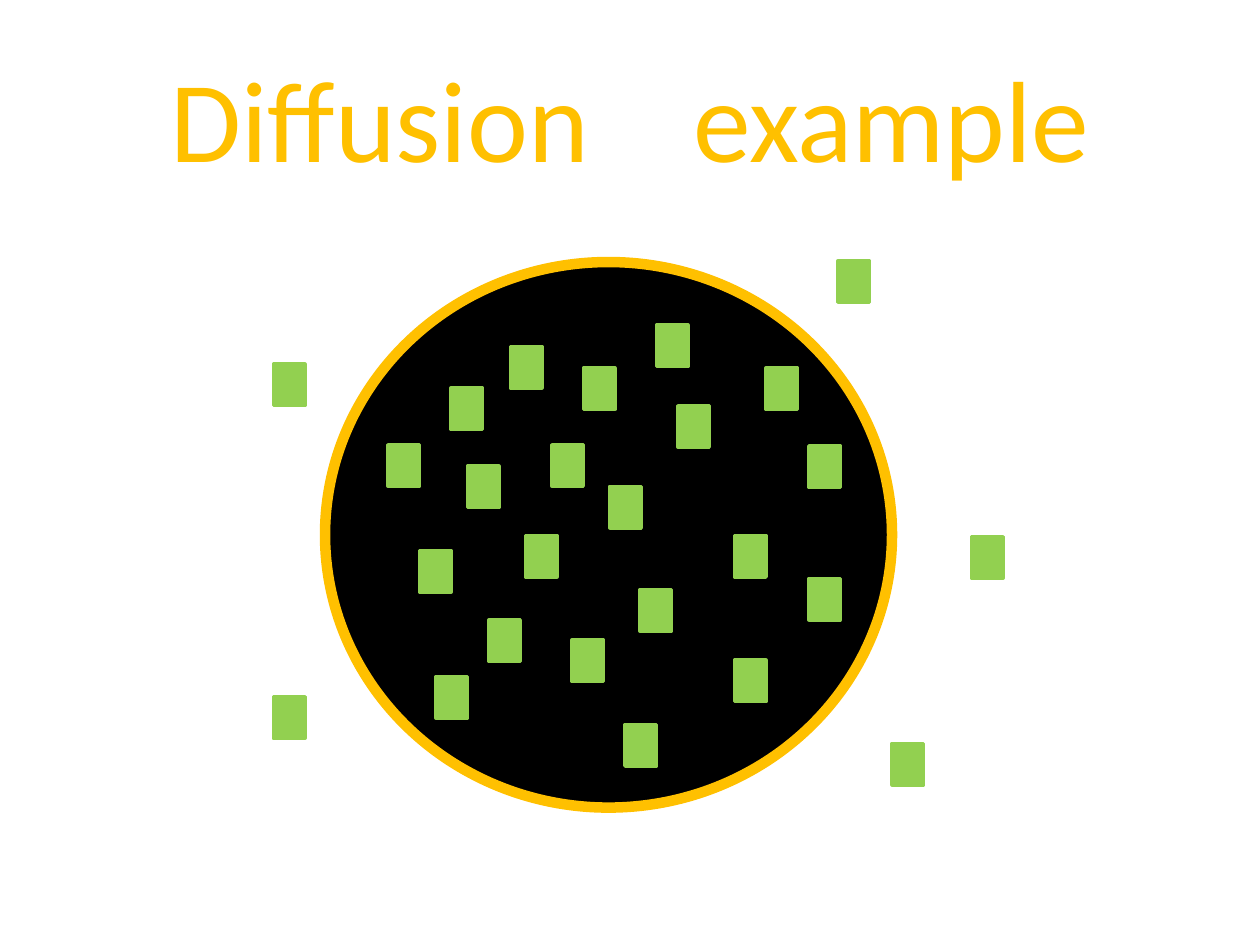
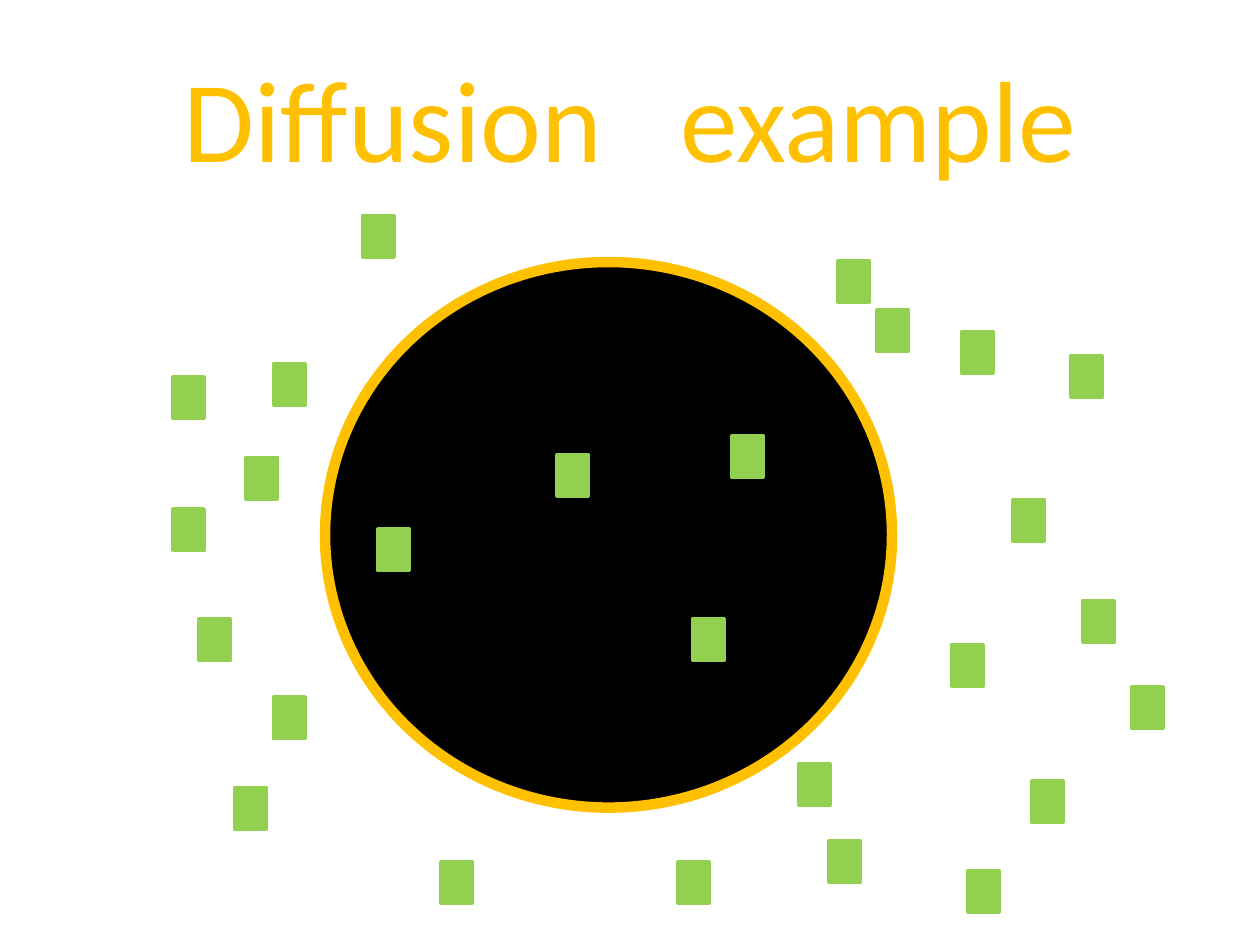
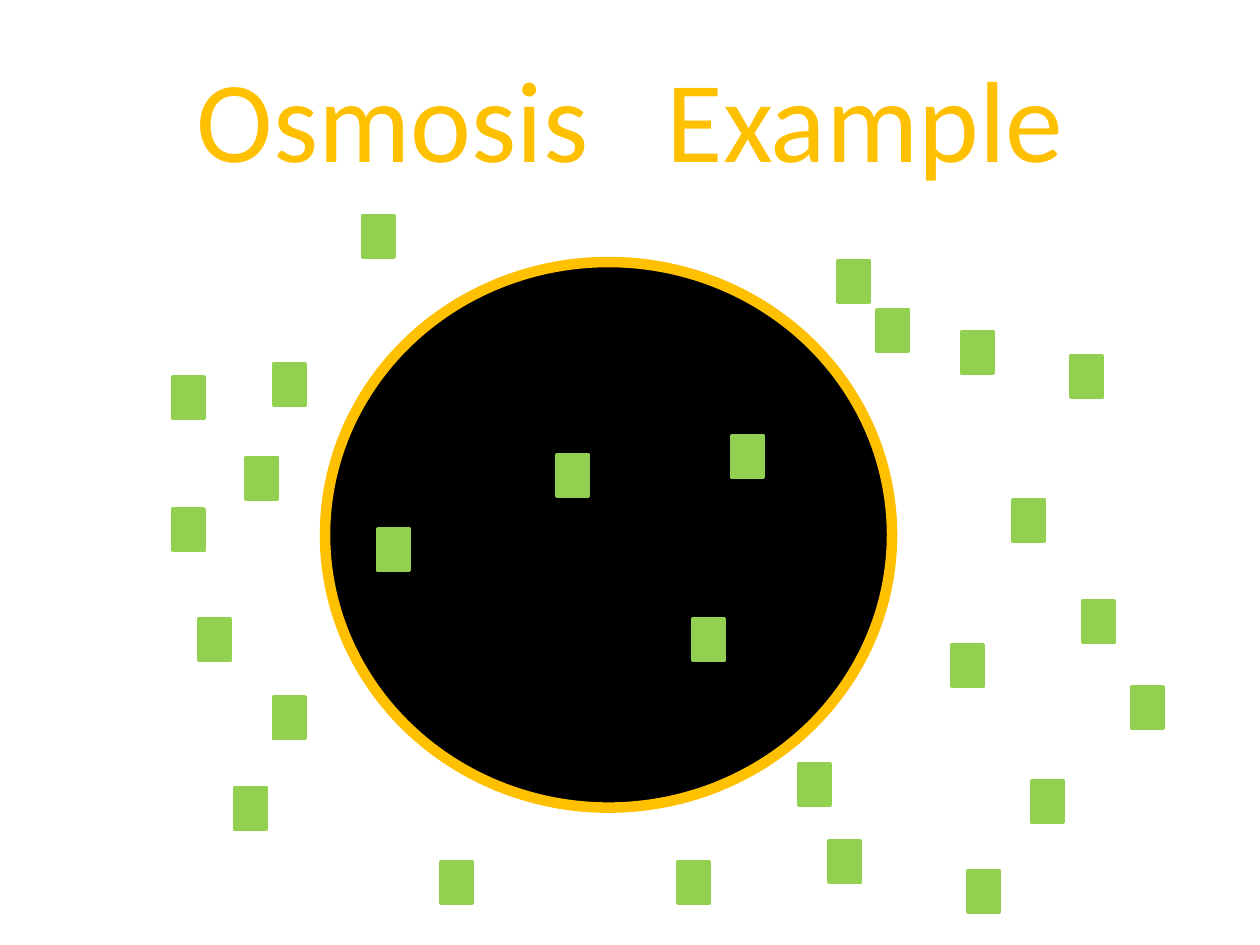
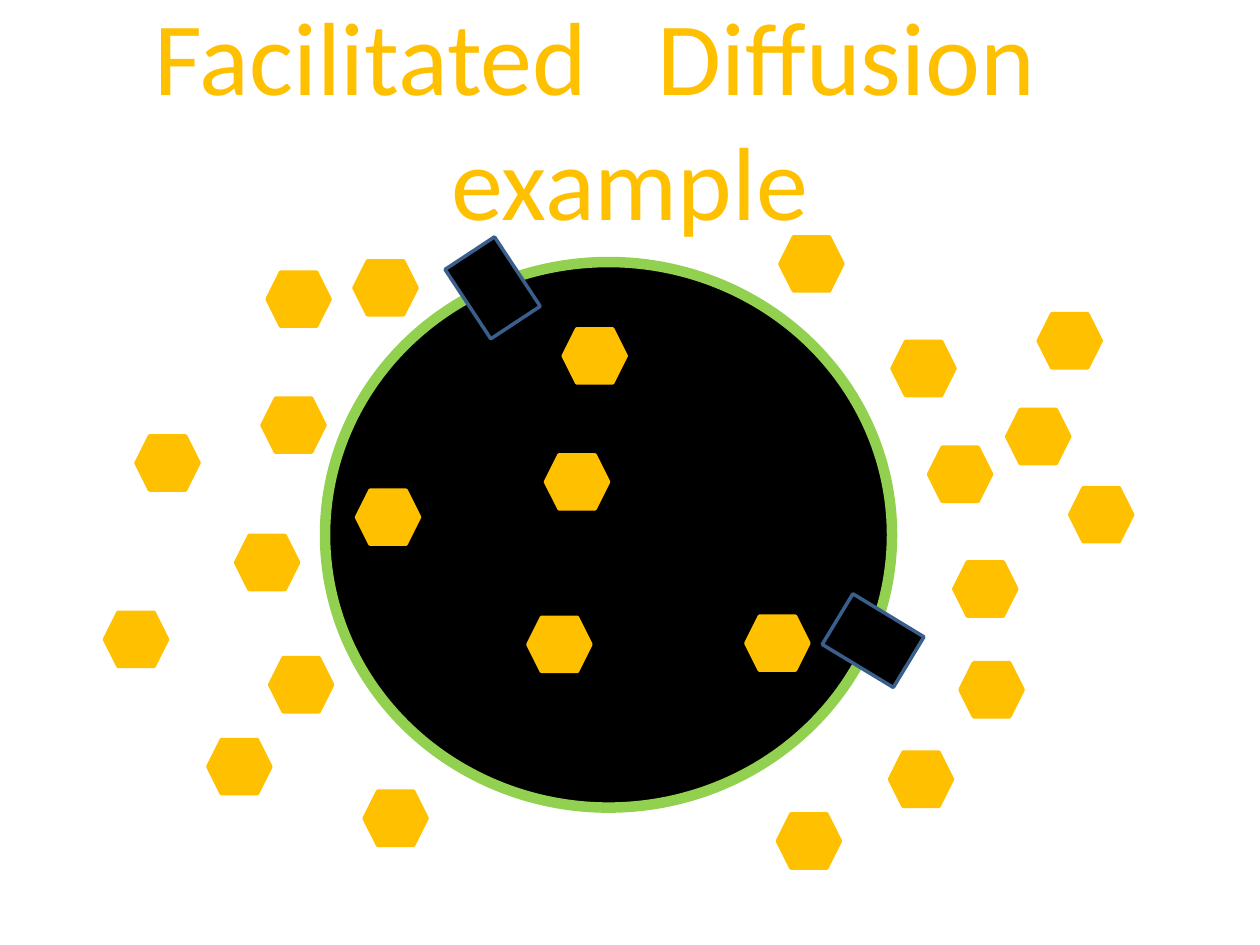
from pptx import Presentation
from pptx.dml.color import RGBColor
from pptx.enum.shapes import MSO_SHAPE
from pptx.enum.text import MSO_ANCHOR, MSO_AUTO_SIZE, PP_ALIGN
from pptx.util import Cm, Pt

INCH = 2.54
GOLD, GREEN, BLACK, BLUE = "FFC000", "92D050", "000000", "3A5F8C"
SPACE = 22.6


def paint(color, value):
    color.rgb = RGBColor.from_string(value)


def draw(slide, kind, box, fill, edge, width=2):
    shape = slide.shapes.add_shape(kind, *[Cm(side * INCH) for side in box])
    shape.shadow.inherit = False
    shape.fill.solid()
    paint(shape.fill.fore_color, fill)
    paint(shape.line.color, edge)
    shape.line.width = Pt(width)
    return shape


packed = [
    (3.58, 3.08), (4.38, 3.53), (3.08, 3.53), (4.05, 2.75), (4.17, 4.25),
    (4.84, 3.86), (3.33, 4.37), (4.63, 2.92), (4.54, 5.08), (5.83, 4.25),
    (5.38, 3.22), (5.08, 4.68), (5.21, 2.58), (3.46, 5.37), (6.42, 3.54),
    (4.96, 5.75), (5.83, 5.24), (3.88, 4.92), (3.71, 3.7), (6.08, 2.92),
    (6.42, 4.59), (6.65, 2.07), (7.71, 4.26), (7.08, 5.9), (2.17, 5.53),
    (2.17, 2.89),
]
spread = [
    (6.58, 6.67), (8.19, 6.2), (5.38, 6.84), (6.34, 6.06), (3.5, 6.84),
    (1.58, 4.91), (7.68, 6.91), (8.98, 5.45), (7.63, 2.63), (5.81, 3.46),
    (1.86, 6.25), (4.42, 3.61), (1.95, 3.63), (3, 4.2), (1.37, 2.99),
    (8.5, 2.82), (5.5, 4.91), (6.96, 2.46), (8.59, 4.77), (2.88, 1.71),
    (1.37, 4.04), (6.65, 2.07), (8.04, 3.97), (7.55, 5.12), (2.17, 5.53),
    (2.17, 2.89),
]
sugar = [
    (2.08, 3.16), (8.49, 3.87), (7.62, 5.26), (6.17, 6.46), (7.37, 3.55),
    (5.92, 4.89), (1.65, 5.87), (7.57, 4.46), (2.14, 5.22), (4.19, 4.9),
    (2.83, 3.89), (7.99, 3.25), (8.24, 2.49), (4.47, 2.61), (4.33, 3.61),
    (2.89, 6.28), (1.08, 3.46), (2.12, 2.16), (7.06, 5.97), (0.83, 4.86),
    (7.08, 2.71), (1.87, 4.25), (2.81, 2.07), (6.19, 1.88),
]
gates = [(3.58, 2.05, 56.6), (6.6, 4.85, 31.2)]

square = (MSO_SHAPE.RECTANGLE, (0.25, 0.33), GREEN)
hexa = (MSO_SHAPE.HEXAGON, (0.5, 0.43), GOLD)

scenes = [
    ([("Diffusion", 3), ("example", 0)], 66, GOLD, square, packed, []),
    ([("Diffusion", 2), ("example", 0)], 66, GOLD, square, spread, []),
    ([("Osmosis", 2), ("Example", 0)], 66, GOLD, square, spread, []),
    ([("Facilitated", 2), ("Diffusion", 3), ("example", 0)],
     59.4, GREEN, hexa, sugar, gates),
]

deck = Presentation()
deck.slide_width, deck.slide_height = Cm(25.4), Cm(19.05)

for words, size, rim, (kind, span, tint), spots, doors in scenes:
    slide = deck.slides.add_slide(deck.slide_layouts[5])

    draw(slide, MSO_SHAPE.OVAL, (2.58, 2.08, 4.5, 4.33), BLACK, rim, 6)
    for spot in spots:
        draw(slide, kind, spot + span, tint, tint)

    title = slide.shapes.title
    slide.shapes.element.append(title.element)
    title.left, title.top = Cm(1.27), Cm(0.76)
    title.width, title.height = Cm(22.86), Cm(3.18)
    frame = title.text_frame
    frame.word_wrap = True
    frame.auto_size = MSO_AUTO_SIZE.NONE
    frame.vertical_anchor = MSO_ANCHOR.MIDDLE
    para = frame.paragraphs[0]
    para.alignment = PP_ALIGN.CENTER
    lead = ""
    for word, gap in words:
        if gap:
            para.add_run().text = lead + word[:-1]
            last = para.add_run()
            last.text = word[-1]
            last._r.get_or_add_rPr().set("spc", str(round(gap * SPACE * size)))
        else:
            para.add_run().text = lead + word
        lead = " "
    for run in para.runs:
        run.font.name = "Calibri"
        run.font.size = Pt(size)
        paint(run.font.color, GOLD)

    for left, top, turn in doors:
        gate = draw(slide, MSO_SHAPE.RECTANGLE, (left, top, 0.66, 0.47), BLACK, BLUE)
        gate.rotation = turn

deck.save("out.pptx")
